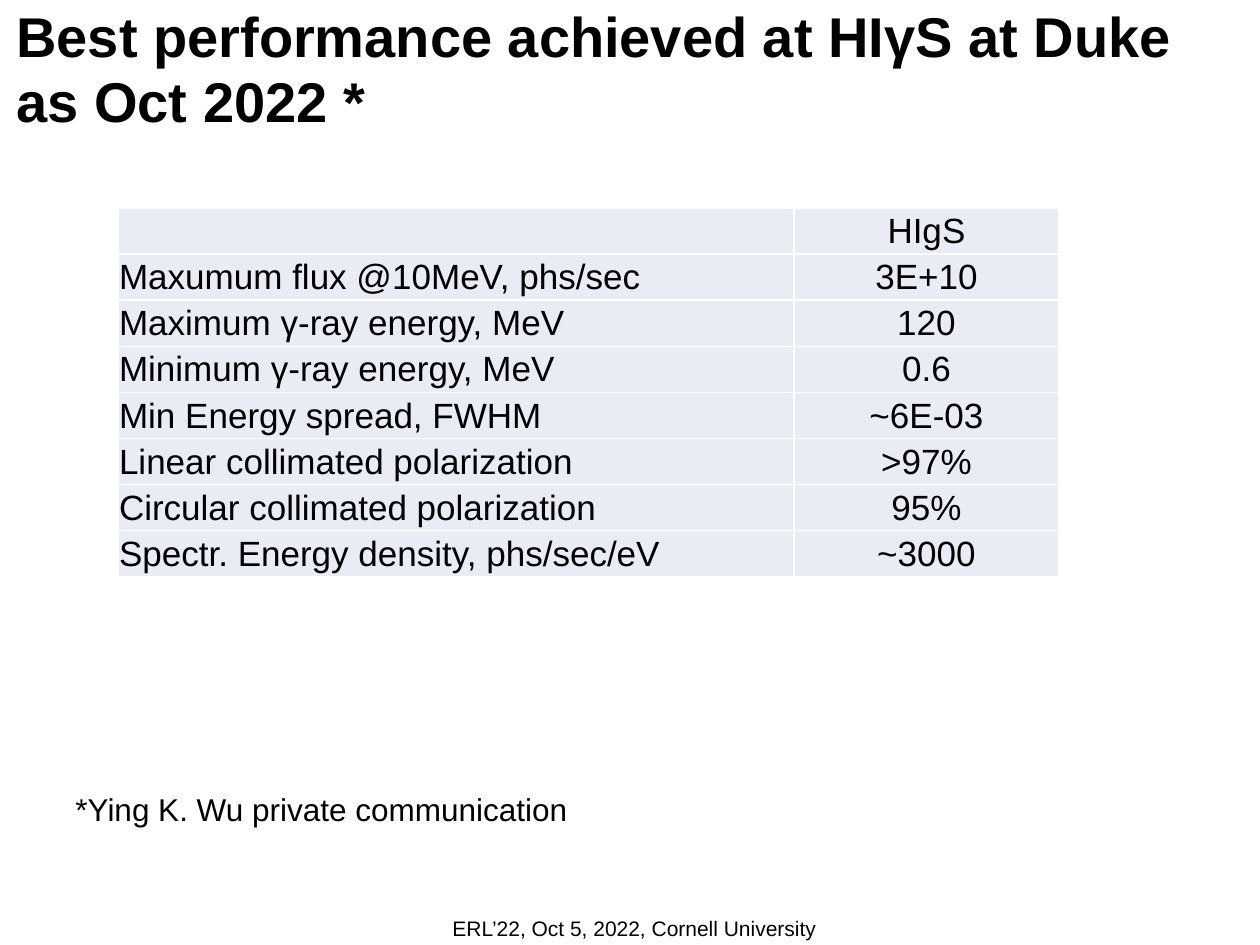
from lxml import etree
from pptx import Presentation
from pptx import util as u
from pptx.dml.color import RGBColor
from pptx.enum import text
from pptx.oxml.ns import qn

TITLE = "Best performance achieved at HIγS at Duke as Oct 2022 *"
FOOTNOTE = "*Ying K. Wu private communication"
FOOTER = "ERL’22, Oct 5, 2022, Cornell University"
ROWS = [
    ("", "HIgS"),
    ("Maxumum flux @10MeV, phs/sec", "3E+10"),
    ("Maximum γ-ray energy, MeV", "120"),
    ("Minimum γ-ray energy, MeV", "0.6"),
    ("Min Energy spread, FWHM", "~6E-03"),
    ("Linear collimated polarization", ">97%"),
    ("Circular collimated polarization", "95%"),
    ("Spectr. Energy density, phs/sec/eV", "~3000"),
]
COL_WIDTHS = (676, 265)
TABLE_LEFT, TABLE_TOP, TABLE_HEIGHT = 118, 208, 369
BLACK, WHITE, CELL_FILL = "000000", "FFFFFF", "E9EBF5"
LEFT, CENTER = text.PP_ALIGN.LEFT, text.PP_ALIGN.CENTER
TOP, MIDDLE = text.MSO_ANCHOR.TOP, text.MSO_ANCHOR.MIDDLE


def px(n):
    return u.Emu(round(n * u.Inches(1) / 126))


def rgb(color):
    return RGBColor.from_string(color)


def write(tf, words, size, bold=False, align=LEFT, spacing=None):
    p = tf.paragraphs[0]
    p.alignment = align
    p.line_spacing = spacing
    p.font.size = u.Pt(size)
    if words:
        r = p.add_run()
        r.text = words
        r.font.name = "Arial"
        r.font.size = u.Pt(size)
        r.font.bold = bold
        r.font.color.rgb = rgb(BLACK)


def add_text(s, box, words, anchor=TOP, **fmt):
    tf = s.shapes.add_textbox(*map(px, box)).text_frame
    tf.word_wrap = True
    tf.vertical_anchor = anchor
    write(tf, words, **fmt)


def set_borders(cell, color, width):
    """Draw all four cell sides; they must precede the fill in tcPr."""
    tc_pr = cell._tc.get_or_add_tcPr()
    for i, side in enumerate(("lnL", "lnR", "lnT", "lnB")):
        ln = etree.Element(qn(f"a:{side}"), w=str(u.Pt(width)))
        fill = etree.SubElement(ln, qn("a:solidFill"))
        etree.SubElement(fill, qn("a:srgbClr"), val=color)
        tc_pr.insert(i, ln)


def add_performance_table(s):
    table = s.shapes.add_table(
        len(ROWS), len(COL_WIDTHS), px(TABLE_LEFT), px(TABLE_TOP),
        px(sum(COL_WIDTHS)), px(TABLE_HEIGHT)).table
    table.first_row = table.horz_banding = False
    for col, width in zip(table.columns, COL_WIDTHS):
        col.width = px(width)
    for i, row in enumerate(ROWS):
        table.rows[i].height = px(TABLE_HEIGHT / len(ROWS))
        for j, (words, align) in enumerate(zip(row, (LEFT, CENTER))):
            cell = table.cell(i, j)
            cell.fill.solid()
            cell.fill.fore_color.rgb = rgb(CELL_FILL)
            cell.margin_left = cell.margin_right = cell.margin_top = px(1)
            cell.margin_bottom = 0
            cell.vertical_anchor = MIDDLE
            write(cell.text_frame, words, size=20, align=align)
            set_borders(cell, WHITE, 1)


def main():
    prs = Presentation()
    prs.slide_width, prs.slide_height = px(1260), px(945)
    s = prs.slides.add_slide(prs.slide_layouts[6])
    add_text(s, (4, 0, 1194, 122), TITLE, size=32, bold=True, spacing=0.96)
    add_text(s, (63, 784, 649, 50), FOOTNOTE, size=18)
    add_performance_table(s)
    add_text(s, (5, 914, 1259, 29), FOOTER, anchor=MIDDLE, size=12, align=CENTER)
    prs.save("out.pptx")


if __name__ == "__main__":
    main()
